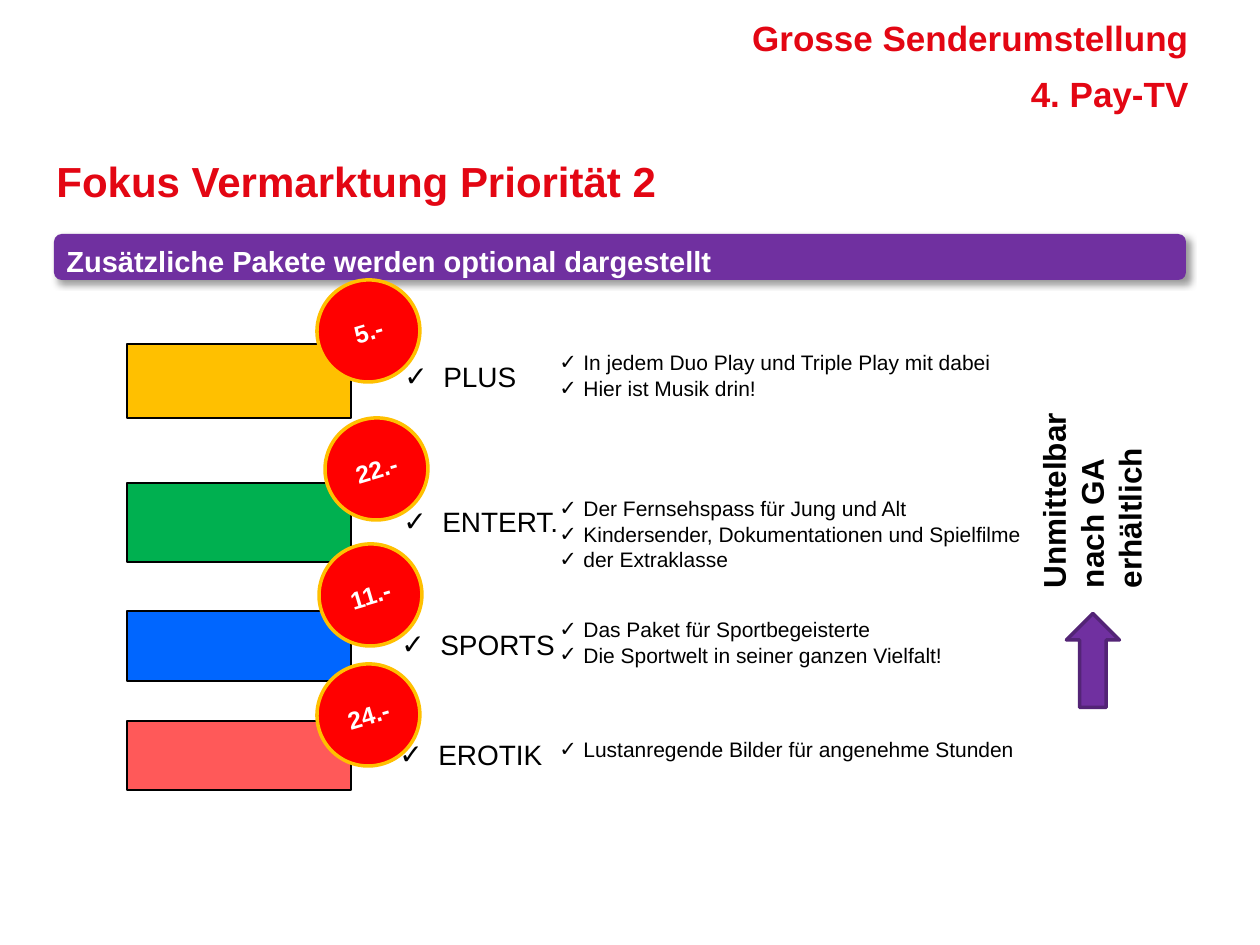
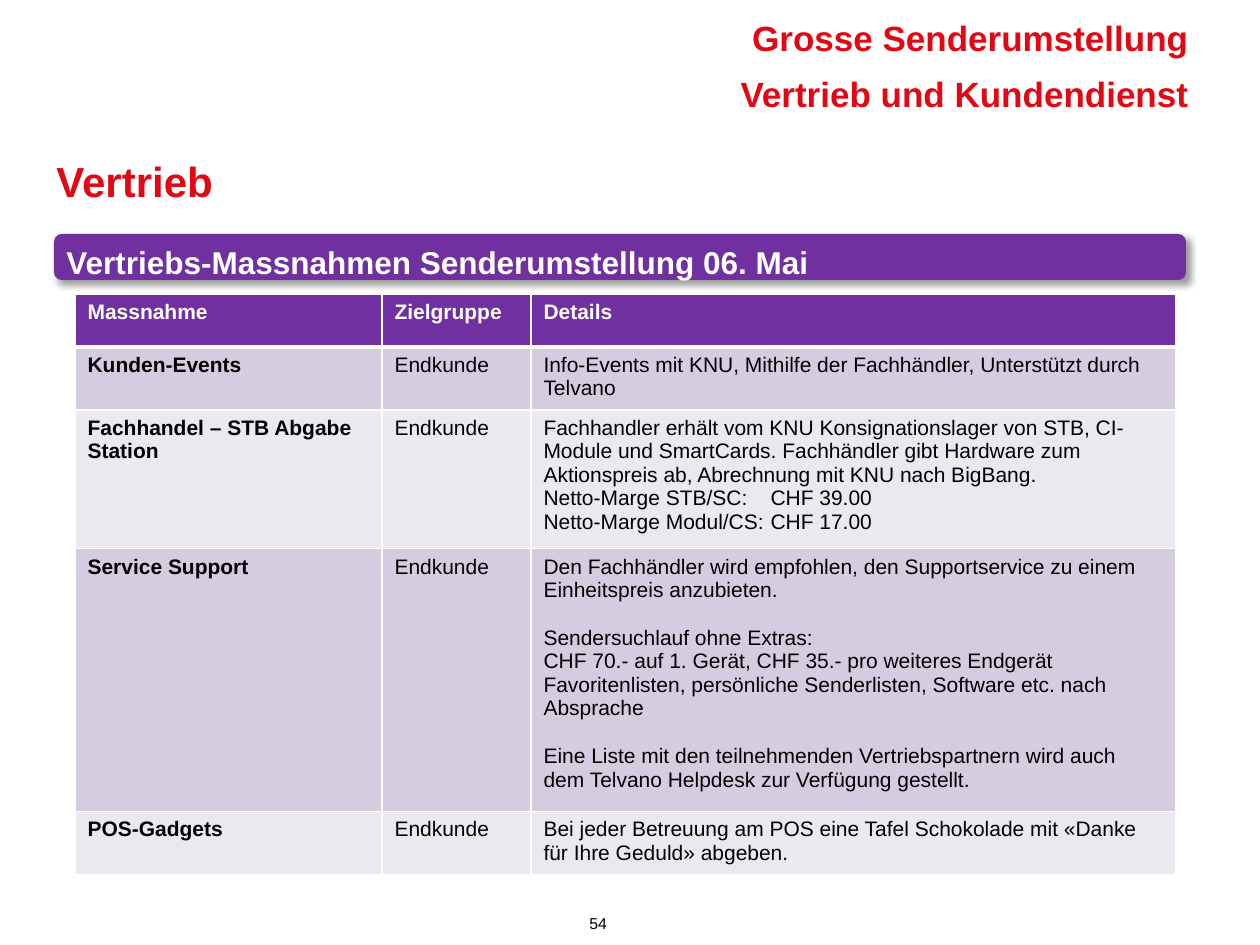
from pptx import Presentation
from pptx.dml.color import RGBColor
from pptx.enum.shapes import MSO_SHAPE as Shape
from pptx.enum.text import MSO_ANCHOR as Anchor, PP_ALIGN as Align
from pptx.oxml import parse_xml
from pptx.oxml.ns import nsdecls
from pptx.util import Emu, Pt

FONT = "Arial"
RED = RGBColor(0xE3, 0x06, 0x13)
PURPLE = RGBColor(0x70, 0x30, 0xA0)
DARK_PURPLE = RGBColor(0x53, 0x24, 0x76)
WHITE = RGBColor(0xFF, 0xFF, 0xFF)
BLACK = RGBColor(0x00, 0x00, 0x00)
PRICE_RED = RGBColor(0xFF, 0x00, 0x00)
GOLD = RGBColor(0xFF, 0xC0, 0x00)
GREEN = RGBColor(0x00, 0xB0, 0x50)
BLUE = RGBColor(0x00, 0x66, 0xFF)
CORAL = RGBColor(0xFF, 0x59, 0x59)
ROW_FILLS = [RGBColor(0xD5, 0xCD, 0xDF), RGBColor(0xEB, 0xE8, 0xF0)]

PX_PER_INCH = 126
LINE_STEP = 25
INSET = 6

DECK_TITLE = "Grosse Senderumstellung"

# name, price, colour, bar (top, height), label (left, top), badge (left, top), detail top, details
PACKAGES = [
    ("PLUS", "5.-", GOLD, (344, 74), (392, 354), (317, 280), 344,
     ["In jedem Duo Play und Triple Play mit dabei", "Hier ist Musik drin!"]),
    ("ENTERT.", "22.-", GREEN, (483, 79), (391, 499), (325, 418), 490,
     ["Der Fernsehspass für Jung und Alt",
      "Kindersender, Dokumentationen und Spielfilme", "der Extraklasse"]),
    ("SPORTS", "11.-", BLUE, (611, 70), (389, 622), (319, 544), 611,
     ["Das Paket für Sportbegeisterte", "Die Sportwelt in seiner ganzen Vielfalt!"]),
    ("EROTIK", "24.-", CORAL, (721, 69), (387, 732), (317, 664), 731,
     ["Lustanregende Bilder für angenehme Stunden"]),
]

HEADINGS = ["Massnahme", "Zielgruppe", "Details"]
# Each detail cell is a list of blocks, each block a list of paragraphs
MEASURES = [
    ("Kunden-Events", "Endkunde",
     [["Info-Events mit KNU, Mithilfe der Fachhändler, Unterstützt durch Telvano"]]),
    ("Fachhandel – STB Abgabe Station", "Endkunde",
     [["Fachhandler erhält vom KNU Konsignationslager von STB, CI-Module und SmartCards. "
       "Fachhändler gibt Hardware zum Aktionspreis ab, Abrechnung mit KNU nach BigBang.",
       "Netto-Marge STB/SC:\tCHF 39.00", "Netto-Marge Modul/CS:\tCHF 17.00"]]),
    ("Service Support", "Endkunde",
     [["Den Fachhändler wird empfohlen, den Supportservice zu einem Einheitspreis anzubieten."],
      ["Sendersuchlauf ohne Extras:",
       "CHF 70.- auf 1. Gerät, CHF 35.- pro weiteres Endgerät",
       "Favoritenlisten, persönliche Senderlisten, Software etc. nach Absprache"],
      ["Eine Liste mit den teilnehmenden Vertriebspartnern wird auch dem Telvano Helpdesk "
       "zur Verfügung gestellt."]]),
    ("POS-Gadgets", "Endkunde",
     [["Bei jeder Betreuung am POS eine Tafel Schokolade mit «Danke für Ihre Geduld» abgeben."]]),
]
COLUMN_WIDTHS = [307, 149, 645]
ROW_HEIGHTS = [53, 60, 130, 248, 59]
PRICE_TAB = 227


def px(length):
    return Emu(round(length * 914400 / PX_PER_INCH))


def style(para, size, color, bold=False, align=Align.LEFT):
    para.alignment = align
    para.font.name = FONT
    para.font.size = Pt(size)
    para.font.bold = bold
    para.font.color.rgb = color


def add_bullet(para, indent):
    props = para._p.get_or_add_pPr()
    props.set("marL", str(px(indent)))
    props.set("indent", str(-px(indent)))
    for tag in ('buFont {} typeface="Arial"', 'buChar {} char="✓"'):
        props.append(parse_xml(f"<a:{tag.format(nsdecls('a'))}/>"))


def add_text(page, area, lines, size, color=BLACK, bold=False, align=Align.LEFT,
             top_inset=INSET, bullet_indent=None):
    box = page.shapes.add_textbox(*map(px, area))
    frame = box.text_frame
    frame.word_wrap = True
    frame.margin_top = px(top_inset)
    frame.text = "\n".join(lines)
    for para in frame.paragraphs:
        if bullet_indent:
            add_bullet(para, bullet_indent)
        style(para, size, color, bold, align)
    return box


def add_solid(page, kind, area, fill, line=None, line_width=1):
    shape = page.shapes.add_shape(kind, *map(px, area))
    shape.shadow.inherit = False
    shape.fill.solid()
    shape.fill.fore_color.rgb = fill
    if line is None:
        shape.line.fill.background()
    else:
        shape.line.color.rgb = line
        shape.line.width = Pt(line_width)
    return shape


def add_page(deck, section, title, band_text, band_size):
    """Add a slide with the shared header lines, title and purple band."""
    page = deck.slides.add_slide(deck.slide_layouts[6])
    band = add_solid(page, Shape.ROUNDED_RECTANGLE, (54, 234, 1132, 46), PURPLE)
    effects = band._element.spPr.find(".//{*}effectLst")
    effects.append(parse_xml(
        f'<a:outerShdw {nsdecls("a")} blurRad="{Pt(4)}" dist="{Pt(3)}" dir="2700000" '
        'algn="tl" rotWithShape="0"><a:srgbClr val="000000"><a:alpha val="40000"/>'
        '</a:srgbClr></a:outerShdw>'))
    for top, text in ((6, DECK_TITLE), (62, section)):
        add_text(page, (541, top, 660, 55), [text], 20, RED, True, Align.RIGHT, top_inset=10)
    add_text(page, (44, 145, 1142, 69), [title], 24, RED, True, top_inset=10)
    add_text(page, (54, 234, 1121, 46), [band_text], band_size, WHITE, True, top_inset=9)
    return page


def add_package(page, name, price, color, bar, label, badge, detail_top, details):
    add_solid(page, Shape.RECTANGLE, (127, bar[0], 224, bar[1]), color, BLACK)
    add_text(page, (*label, 320, 47), [name], 16, bullet_indent=39)
    circle = add_solid(page, Shape.OVAL, (*badge, 103, 102), PRICE_RED, GOLD, 2)
    circle.rotation = 343.6
    frame = circle.text_frame
    frame.word_wrap = False
    frame.vertical_anchor = Anchor.MIDDLE
    frame.text = price
    style(frame.paragraphs[0], 14, WHITE, True, Align.CENTER)
    height = len(details) * LINE_STEP + 2 * INSET
    add_text(page, (547, detail_top, 610, height), details, 12, bullet_indent=24)


def add_borders(cell, top_width, bottom_width):
    props = cell._tc.get_or_add_tcPr()
    sides = (("lnL", 1), ("lnR", 1), ("lnT", top_width), ("lnB", bottom_width))
    for position, (side, width) in enumerate(sides):
        props.insert(position, parse_xml(
            f'<a:{side} {nsdecls("a")} w="{Pt(width)}"><a:solidFill>'
            f'<a:srgbClr val="{WHITE}"/></a:solidFill></a:{side}>'))


def fill_cell(cell, blocks, fill, color, bold):
    """Write blocks of paragraphs, with a one-line gap between blocks."""
    cell.fill.solid()
    cell.fill.fore_color.rgb = fill
    frame = cell.text_frame
    frame.text = "\n".join(line for block in blocks for line in block)
    block_starts = [sum(map(len, blocks[:n])) for n in range(1, len(blocks))]
    for number, para in enumerate(frame.paragraphs):
        if number in block_starts:
            para.space_before = Pt(13.8)
        if "\t" in para.text:
            para._p.get_or_add_pPr().append(parse_xml(
                f'<a:tabLst {nsdecls("a")}><a:tab pos="{px(PRICE_TAB)}" algn="l"/></a:tabLst>'))
        style(para, 12, color, bold)


def add_measures(page):
    area = (75, 294, sum(COLUMN_WIDTHS), sum(ROW_HEIGHTS))
    table = page.shapes.add_table(len(ROW_HEIGHTS), len(COLUMN_WIDTHS), *map(px, area)).table
    for column, width in zip(table.columns, COLUMN_WIDTHS):
        column.width = px(width)
    for row, height in zip(table.rows, ROW_HEIGHTS):
        row.height = px(height)
    for column, heading in enumerate(HEADINGS):
        cell = table.cell(0, column)
        fill_cell(cell, [[heading]], PURPLE, WHITE, True)
        add_borders(cell, 1, 3)
    for row, (measure, audience, details) in enumerate(MEASURES, start=1):
        for column, blocks in enumerate(([[measure]], [[audience]], details)):
            cell = table.cell(row, column)
            fill_cell(cell, blocks, ROW_FILLS[(row - 1) % 2], BLACK, column == 0)
            add_borders(cell, 3 if row == 1 else 1, 1)


def main():
    deck = Presentation()
    deck.slide_width, deck.slide_height = px(1260), px(945)

    page = add_page(deck, "4. Pay-TV", "Fokus Vermarktung Priorität 2",
                    "Zusätzliche Pakete werden optional dargestellt", 16.6)
    for package in PACKAGES:
        add_package(page, *package)
    arrow = add_solid(page, Shape.RIGHT_ARROW, (1046, 634, 94, 53), PURPLE, DARK_PURPLE, 2)
    arrow.rotation = 270
    availability = add_text(page, (968, 413, 248, 127), ["Unmittelbar nach GA erhältlich"],
                            18, bold=True)
    availability.rotation = 270

    page = add_page(deck, "Vertrieb und Kundendienst", "Vertrieb",
                    "Vertriebs-Massnahmen Senderumstellung 06. Mai", 18)
    add_measures(page)
    add_text(page, (451, 908, 294, 37), ["54"], 9, align=Align.CENTER)

    deck.save("out.pptx")


if __name__ == "__main__":
    main()
